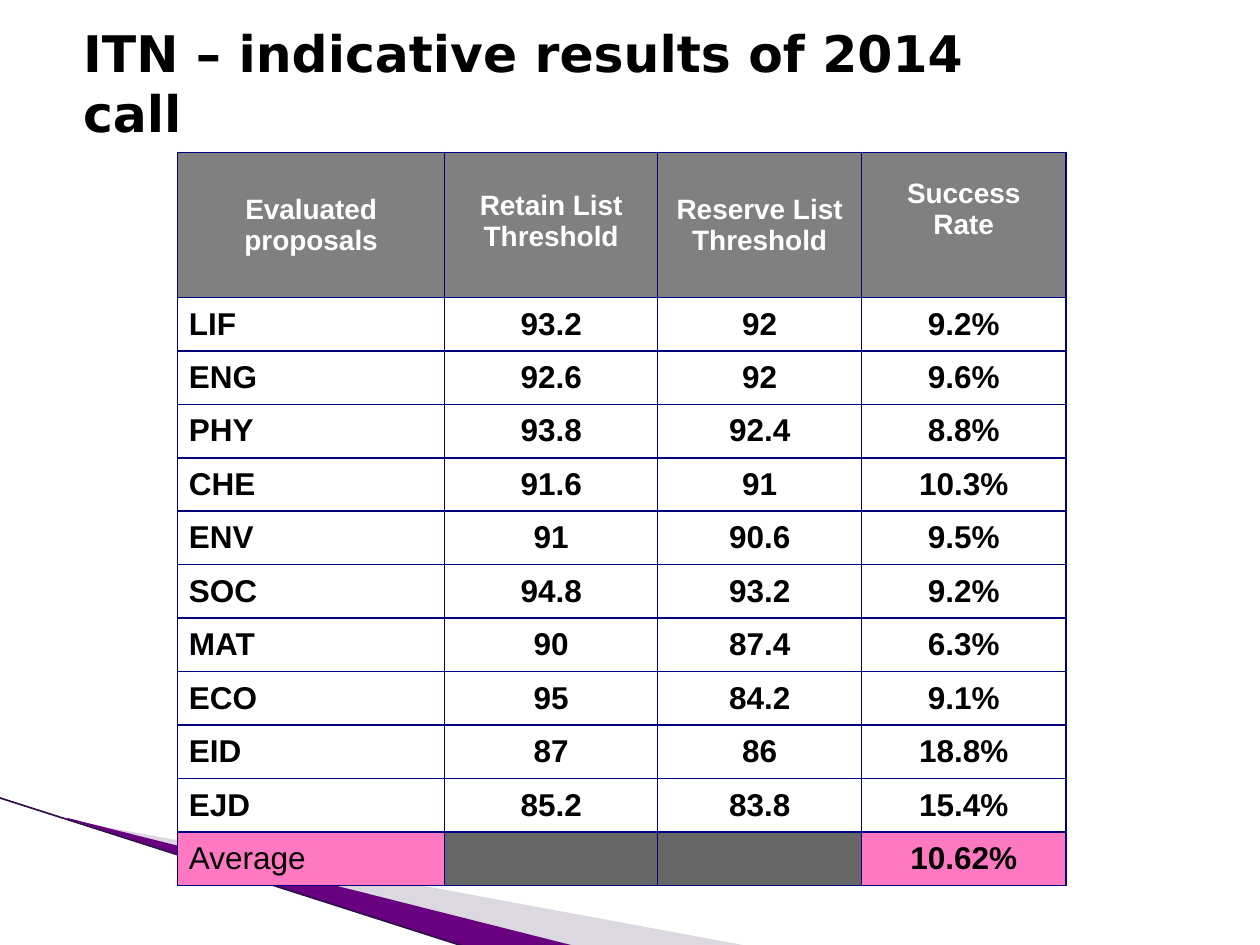
import pptx
import pptx.util
import pptx.dml.color
import pptx.enum.text
import pptx.oxml
import pptx.oxml.ns
from lxml import etree

Inches = pptx.util.Inches
Pt = pptx.util.Pt
ALIGN = pptx.enum.text.PP_ALIGN
MIDDLE = pptx.enum.text.MSO_ANCHOR.MIDDLE
qn = pptx.oxml.ns.qn

COLORS = {
    "black": "000000", "white": "FFFFFF", "head": "808080", "blank": "666666",
    "pink": "FF79C2", "border": "000080", "purple": "68007F", "mist": "A7A2B1",
    "edge": "2F0F4A",
}

TITLE = "ITN – indicative results of 2014 call"
HEADS = ["Evaluated proposals", "Retain List Threshold",
         "Reserve List Threshold", "Success Rate"]
LIFTS = [0, 0.06, 0, 0.25]  # extra bottom margin of each heading
ROWS = [
    ("LIF", "93.2", "92", "9.2%"),
    ("ENG", "92.6", "92", "9.6%"),
    ("PHY", "93.8", "92.4", "8.8%"),
    ("CHE", "91.6", "91", "10.3%"),
    ("ENV", "91", "90.6", "9.5%"),
    ("SOC", "94.8", "93.2", "9.2%"),
    ("MAT", "90", "87.4", "6.3%"),
    ("ECO", "95", "84.2", "9.1%"),
    ("EID", "87", "86", "18.8%"),
    ("EJD", "85.2", "83.8", "15.4%"),
    ("Average", "", "", "10.62%"),
]
WIDTHS = [2.12, 1.69, 1.62, 1.62]
LEFT, TOP, HEIGHT, HEAD_H = 1.41, 1.21, 5.82, 1.15
WEDGES = [
    ([(0.55, 6.51), (5.95, 7.51), (4.56, 7.51), (0.55, 6.5)], "mist", 40),
    ([(0.53, 6.49), (4.57, 7.51), (3.72, 7.52), (0.54, 6.5)], "purple", 100),
]


def rgb(name):
    return pptx.dml.color.RGBColor.from_string(COLORS[name])


def write(frame, text, size=18, font="Arial", color="black", bold=True,
          align=ALIGN.CENTER):
    para = frame.paragraphs[0]
    para.alignment = align
    run = para.add_run()
    run.text = text
    run.font.size = Pt(size)
    run.font.name = font
    run.font.bold = bold
    run.font.color.rgb = rgb(color)


def draw_wedge(slide, points, color, alpha):
    spots = [(Inches(x), Inches(y)) for x, y in points]
    pen = slide.shapes.build_freeform(*spots[0])
    pen.add_line_segments(spots[1:], close=True)
    shape = pen.convert_to_shape()
    shape.shadow.inherit = False
    shape.fill.solid()
    shape.fill.fore_color.rgb = rgb(color)
    shape.line.fill.background()
    if alpha < 100:
        tint = shape.fill._xPr.find(".//" + qn("a:srgbClr"))
        etree.SubElement(tint, qn("a:alpha"), val=str(alpha * 1000))


def draw_edge(slide):
    line = slide.shapes.add_connector(
        pptx.enum.shapes.MSO_CONNECTOR.STRAIGHT,
        Inches(-0.01), Inches(6.33), Inches(3.71), Inches(7.52))
    line.line.color.rgb = rgb("edge")
    line.line.width = Pt(0.95)
    etree.SubElement(line._element.spPr, qn("a:effectLst"))


def style_cell(cell, fill, lift=0):
    """Set margins, borders and fill; lift raises centred text."""
    cell.vertical_anchor = MIDDLE
    cell.margin_left = cell.margin_right = Inches(0.09)
    cell.margin_top = Inches(0.05)
    cell.margin_bottom = Inches(0.05 + lift)
    props = cell._tc.get_or_add_tcPr()
    for side in ("lnL", "lnR", "lnT", "lnB"):
        edge = etree.SubElement(props, qn("a:" + side), w=str(Pt(1)))
        solid = etree.SubElement(edge, qn("a:solidFill"))
        etree.SubElement(solid, qn("a:srgbClr"), val=COLORS["border"])
    if fill:
        cell.fill.solid()
        cell.fill.fore_color.rgb = rgb(fill)
    else:
        cell.fill.background()


def draw_table(slide):
    table = slide.shapes.add_table(
        len(ROWS) + 1, len(HEADS), Inches(LEFT), Inches(TOP),
        Inches(sum(WIDTHS)), Inches(HEIGHT)).table
    table.first_row = table.horz_banding = False
    for col, width in zip(table.columns, WIDTHS):
        col.width = Inches(width)
    for row in table.rows:
        row.height = Inches((HEIGHT - HEAD_H) / len(ROWS))
    table.rows[0].height = Inches(HEAD_H)

    for c, (text, lift) in enumerate(zip(HEADS, LIFTS)):
        cell = table.cell(0, c)
        style_cell(cell, "head", lift)
        write(cell.text_frame, text, size=16, color="white")
    for r, row in enumerate(ROWS, 1):
        last = r == len(ROWS)
        for c, text in enumerate(row):
            cell = table.cell(r, c)
            style_cell(cell, ("pink" if text else "blank") if last else None)
            if text:
                write(cell.text_frame, text, bold=not (last and c == 0),
                      align=ALIGN.CENTER if c else ALIGN.JUSTIFY)


def main():
    deck = pptx.Presentation()
    deck.slide_width, deck.slide_height = Inches(10), Inches(7.5)
    slide = deck.slides.add_slide(deck.slide_layouts[5])
    for points, color, alpha in WEDGES:
        draw_wedge(slide, points, color, alpha)
    draw_edge(slide)

    title = slide.shapes.title
    title.left, title.top = Inches(0.56), Inches(0.28)
    title.width, title.height = Inches(7.73), Inches(0.75)
    title.text_frame.vertical_anchor = MIDDLE
    title.text_frame.auto_size = pptx.enum.text.MSO_AUTO_SIZE.NONE
    write(title.text_frame, TITLE, size=28.8, font="DejaVu Sans",
          align=ALIGN.LEFT)

    draw_table(slide)
    deck.save("out.pptx")


if __name__ == "__main__":
    main()
